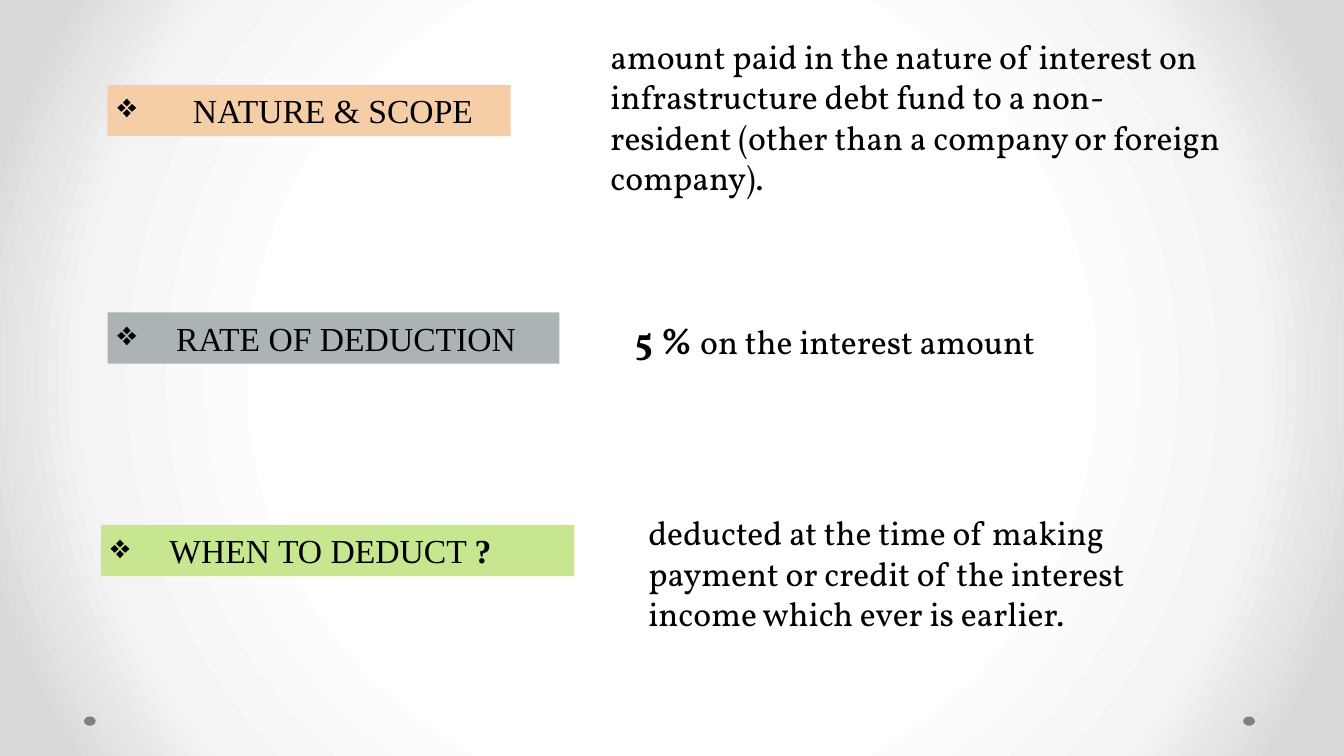
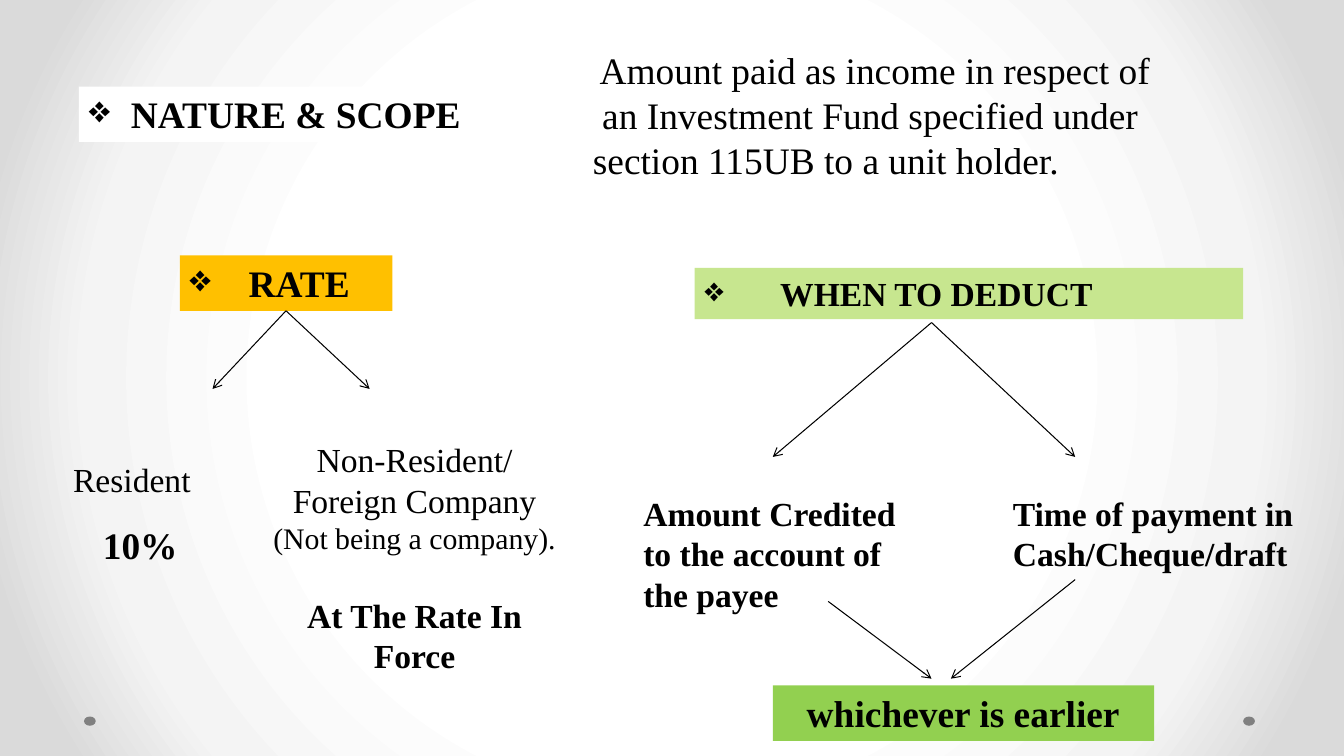
from lxml.etree import SubElement
from pptx import Presentation
from pptx.dml.color import RGBColor
from pptx.enum.shapes import MSO_CONNECTOR, MSO_SHAPE
from pptx.enum.text import MSO_ANCHOR, MSO_AUTO_SIZE, PP_ALIGN
from pptx.oxml import parse_xml
from pptx.oxml.ns import nsdecls, qn
from pptx.util import Inches, Pt

deck = Presentation()
deck.slide_width, deck.slide_height = Inches(13.333), Inches(7.5)
COLUMN, ROW = deck.slide_width / 160, deck.slide_height / 90
SERIF, BOOK = "Times New Roman", "Vollkorn"
BODY, LARGE, SMALL = 24, 26.7, 21.3
BLACK, GREY, LIME = "000000", "808080", "C7E68F"
BULLET_INDENT = 5
CENTRED = {"alignment": PP_ALIGN.CENTER}
SPACED = {"alignment": PP_ALIGN.CENTER, "line_spacing": 1.5}


def paint(target, colour):
    target.solid()
    target.fore_color.rgb = RGBColor.from_string(colour)


def add_box(page, place, paragraphs=(), fill=None, kind=MSO_SHAPE.RECTANGLE):
    left, top, width, height = place
    area = [int(left * COLUMN), int(top * ROW), int(width * COLUMN), int(height * ROW)]
    if fill:
        box = page.shapes.add_shape(kind, *area)
        box.shadow.inherit = False
        box.line.fill.background()
        paint(box.fill, fill)
    else:
        box = page.shapes.add_textbox(*area)
    if not paragraphs:
        return box
    frame = box.text_frame
    settings = {"word_wrap": True, "auto_size": MSO_AUTO_SIZE.SHAPE_TO_FIT_TEXT,
                "vertical_anchor": MSO_ANCHOR.TOP}
    for name, value in settings.items():
        setattr(frame, name, value)
    for index, (layout, runs) in enumerate(paragraphs):
        para = frame.add_paragraph() if index else frame.paragraphs[0]
        layout = {"alignment": PP_ALIGN.LEFT, **layout}
        properties = para._p.get_or_add_pPr()
        margin = layout.pop("margin", 0)
        bullet_gap = layout.pop("bullet_gap", None)
        for name, value in layout.items():
            setattr(para, name, value)
        if bullet_gap is not None:
            margin = BULLET_INDENT + bullet_gap
            properties.set("indent", str(-int(margin * COLUMN)))
            SubElement(properties, qn("a:buChar")).set("char", "❖")
        properties.set("marL", str(int(margin * COLUMN)))
        for text, size, bold, font in runs:
            for number, line in enumerate(text.split("\n")):
                if number:
                    para.add_line_break()
                span = para.add_run()
                span.text = line
                style = {"size": Pt(size), "bold": bold, "name": font}
                for name, value in style.items():
                    setattr(span.font, name, value)
                paint(span.font.fill, BLACK)
    return box


backdrop = deck.slide_master.background.fill
backdrop.gradient()
gradient = next(deck.slide_master._element.iter(qn("a:gradFill")))
stops = "".join(
    f'<a:gs pos="{position}000"><a:srgbClr val="{colour}"/></a:gs>'
    for position, colour in [(50, "FFFFFF"), (76, "F4F4F4"), (92, "DADADA")])
gradient.getparent().replace(gradient, parse_xml(
    f'<a:gradFill {nsdecls("a")} rotWithShape="1"><a:gsLst>{stops}</a:gsLst>'
    '<a:path path="circle"><a:fillToRect l="50000" t="50000" r="50000" b="50000"/>'
    '</a:path></a:gradFill>'))

pages = [deck.slides.add_slide(deck.slide_layouts[6]) for _ in range(2)]
for page in pages:
    for left in (148, 10):
        add_box(page, (left, 85.3, 1.4, 1.1), fill=GREY, kind=MSO_SHAPE.OVAL)

debt_fund, investment_fund = pages

debt_labels = [
    ((12.8, 10.1, 48, 6.1), "F5CEA7", 4, [("NATURE & SCOPE", BODY, False, SERIF)]),
    ((12.8, 37.2, 53.8, 6.1), "ACB3B6", 2, [("RATE OF DEDUCTION", BODY, False, SERIF)]),
    ((12, 62.5, 56.4, 6.1), LIME, 2,
     [("WHEN TO DEDUCT ", BODY, False, SERIF), ("?", BODY, True, SERIF)]),
]
debt_answers = [
    ((71.5, 3.7, 82.7, 20.6),
     [("amount paid in the nature of interest on infrastructure debt fund to a non-\n"
       "resident (other than a company or foreign company).", BODY, False, BOOK)]),
    ((74.4, 37.2, 76.9, 6.6),
     [("5 % ", LARGE, True, BOOK), ("on the interest amount", BODY, False, BOOK)]),
    ((76, 60.4, 72, 15.7),
     [("deducted at the time of making\npayment or credit of the interest "
       "income which ever is earlier.", BODY, False, BOOK)]),
]
fund_labels = [
    ((9.4, 10.3, 47.5, 6.6), "FFFFFF", 0, [("NATURE & SCOPE", LARGE, True, SERIF)]),
    ((82.7, 31.9, 65.3, 6.1), LIME, 4, [("WHEN TO DEDUCT", BODY, True, SERIF)]),
    ((21.4, 30.4, 25.3, 6.6), "FFC000", 2, [("RATE", LARGE, True, SERIF)]),
]
fund_answers = [
    ((69.4, 5, 73.3, 17.4),
     [(" ", BODY, False, BOOK),
      ("Amount paid as income in respect of\n an Investment Fund specified under "
       "section 115UB to a unit holder.", LARGE, False, SERIF)]),
    ((75.4, 58.1, 33.4, 15.7),
     [("Amount Credited to the account of the payee", BODY, True, SERIF)]),
    ((119.4, 58.1, 40.6, 10.9),
     [("Time of payment in Cash/Cheque/draft", BODY, True, SERIF)]),
]
for page, labels, answers in [(debt_fund, debt_labels, debt_answers),
                              (investment_fund, fund_labels, fund_answers)]:
    for place, fill, gap, runs in labels:
        label = add_box(page, place, [({"bullet_gap": gap}, runs)], fill)
    for place, runs in answers:
        add_box(page, place, [({}, runs)])
rate_label = label

add_box(investment_fund, (4, 51.7, 23.4, 16.6), [
    (SPACED, [("Resident", BODY, False, SERIF)]),
    ({**SPACED, "margin": 2}, [("10%", LARGE, True, SERIF)]),
])
add_box(investment_fund, (30.7, 51.7, 37.3, 29.8), [
    (CENTRED, [("Non-Resident/", BODY, False, SERIF)]),
    (CENTRED, [("Foreign Company", BODY, False, SERIF)]),
    (CENTRED, [("(Not being a company).", SMALL, False, SERIF)]),
    ({**CENTRED, "space_before": Pt(28)}, [("At The Rate In Force", BODY, True, SERIF)]),
])
add_box(investment_fund, (92, 81.6, 45.4, 6.6),
        [(CENTRED, [("whichever is earlier", LARGE, True, SERIF)])], "92D050")

arrows = [
    ((34, 37), (44, 46.3), rate_label),
    ((34, 37), (25.3, 46.3), rate_label),
    ((110.9, 38.4), (92, 54.4), None),
    ((110.9, 38.4), (128, 54.4), None),
    ((98.6, 71.6), (110.9, 80.8), None),
    ((128, 69), (113.2, 80.8), None),
]
for start, end, source in arrows:
    ends = [int(value * unit) for point in (start, end)
            for value, unit in zip(point, (COLUMN, ROW))]
    arrow = investment_fund.shapes.add_connector(MSO_CONNECTOR.STRAIGHT, *ends)
    if source:
        arrow.begin_connect(source, 2)
    paint(arrow.line.fill, BLACK)
    arrow.line.width = Pt(0.75)
    outline = arrow._element.spPr
    SubElement(outline.find(qn("a:ln")), qn("a:tailEnd")).set("type", "arrow")
    SubElement(outline, qn("a:effectLst"))

deck.save("out.pptx")
